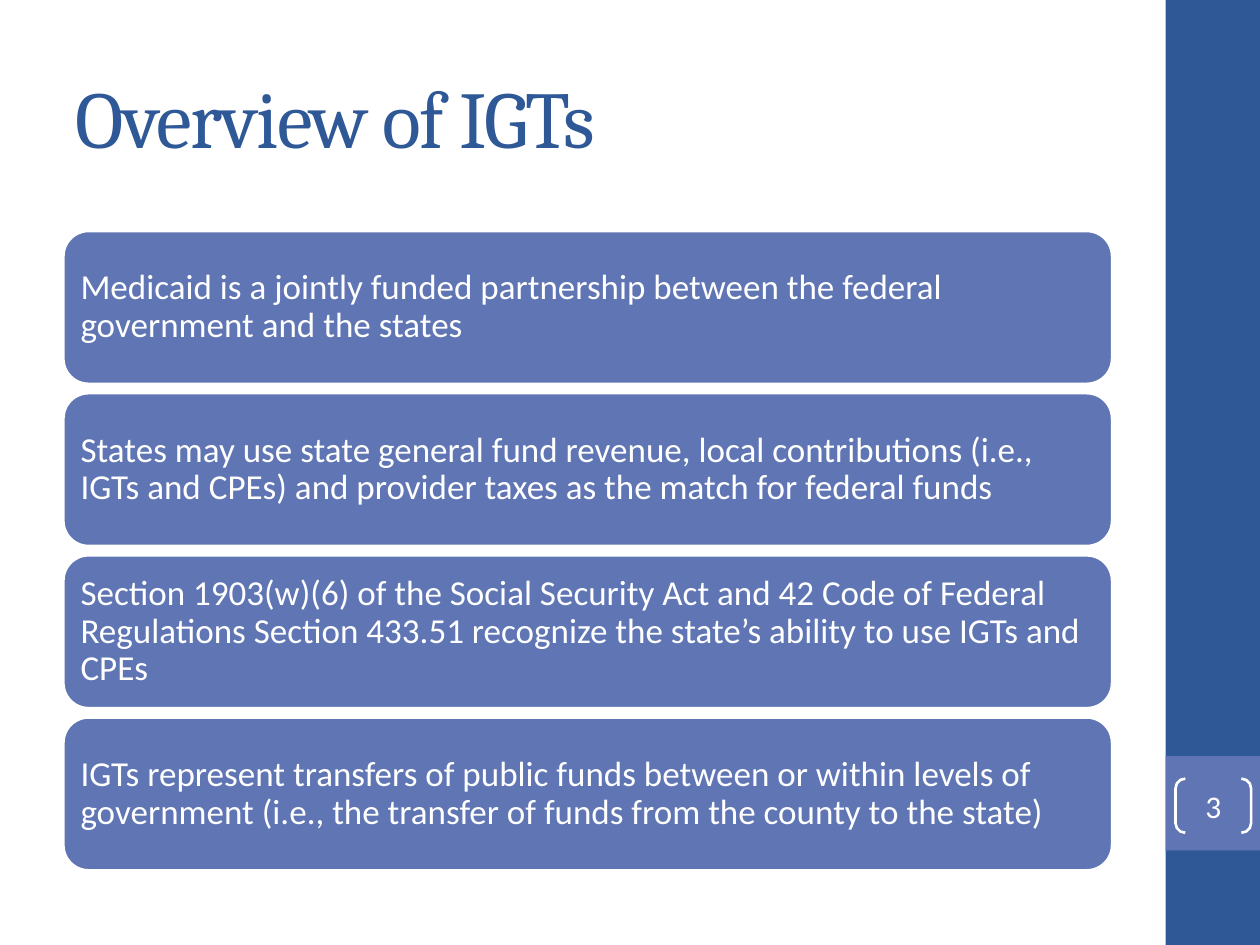
from pptx import Presentation
from pptx.dml.color import RGBColor
from pptx.enum import shapes, text
from pptx.util import Inches, Pt

COLORS = {"navy": "2F5897", "blue": "6076B4", "white": "FFFFFF"}
STATEMENTS = [
    "Medicaid is a jointly funded partnership between the federal government and the states",
    "States may use state general fund revenue, local contributions (i.e., IGTs and CPEs) "
    "and provider taxes as the match for federal funds",
    "Section 1903(w)(6) of the Social Security Act and 42 Code of Federal Regulations "
    "Section 433.51 recognize the state’s ability to use IGTs and CPEs",
    "IGTs represent transfers of public funds between or within levels of government "
    "(i.e., the transfer of funds from the county to the state)",
]


def add_box(page, kind, left, top, width, height, fill=None, line_width=None):
    box = page.shapes.add_shape(kind, Inches(left), Inches(top), Inches(width), Inches(height))
    box.shadow.inherit = False
    if fill:
        box.fill.solid()
        box.fill.fore_color.rgb = RGBColor.from_string(COLORS[fill])
    else:
        box.fill.background()
    if line_width:
        box.line.color.rgb = RGBColor.from_string(COLORS["white"])
        box.line.width = Pt(line_width)
    else:
        box.line.fill.background()
    return box


def write(box, words, font, size, color, align, margin):
    frame = box.text_frame
    frame.text = words
    frame.word_wrap = True
    frame.vertical_anchor = text.MSO_ANCHOR.MIDDLE
    frame.margin_left = frame.margin_right = Inches(margin)
    frame.margin_top = frame.margin_bottom = Inches(margin)
    para = frame.paragraphs[0]
    para.alignment = align
    span = para.runs[0]
    span.font.name = font
    span.font.size = Pt(size)
    span.font.color.rgb = RGBColor.from_string(COLORS[color])
    return para


deck = Presentation()
deck.slide_width = Inches(10)
deck.slide_height = Inches(7.5)
page = deck.slides.add_slide(deck.slide_layouts[5])
kinds = shapes.MSO_SHAPE

add_box(page, kinds.RECTANGLE, 9.25, 0, 0.75, 7.5, "navy")
add_box(page, kinds.RECTANGLE, 9.25, 6, 0.75, 0.75, "blue")

title = page.shapes.title
title.left, title.top = Inches(0.5), Inches(0.3)
title.width, title.height = Inches(8.33), Inches(1.25)
heading = write(title, "Overview of IGTs", "Cambria", 46, "navy", text.PP_ALIGN.LEFT, 0.1)
heading.runs[0].font._element.set("spc", "-100")

for row, statement in enumerate(STATEMENTS):
    card = add_box(page, kinds.ROUNDED_RECTANGLE, 0.5, 1.83 + row * 1.287, 8.33, 1.22, "blue", 2)
    para = write(card, statement, "Calibri", 20, "white", text.PP_ALIGN.LEFT, 0.08)
    para.line_spacing = 0.9

bracket = add_box(page, kinds.DOUBLE_BRACKET, 9.33, 6.18, 0.6, 0.43, line_width=1.5)
bracket.adjustments[0] = 0.18
write(bracket, "3", "Calibri", 18, "white", text.PP_ALIGN.CENTER, 0)

deck.save("out.pptx")
